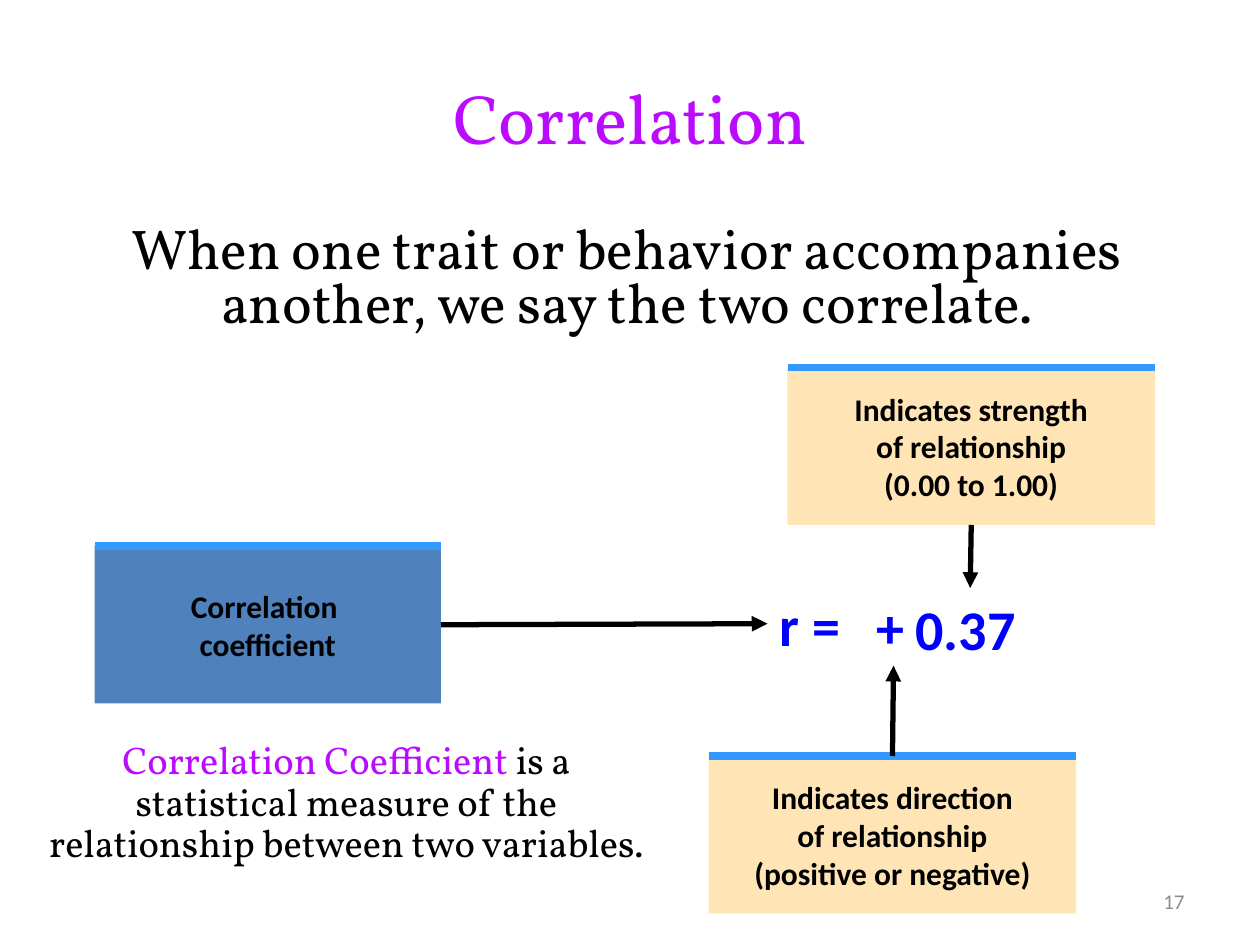
import pptx
import pptx.util
import pptx.dml.color
import pptx.enum.shapes
import pptx.enum.text
import pptx.oxml.ns
import lxml.etree

RGBColor = pptx.dml.color.RGBColor
PURPLE = RGBColor(0xBB, 0x0B, 0xFF)
BLACK = RGBColor(0, 0, 0)
GRAY = RGBColor(0x8C, 0x8C, 0x8C)
BLUE = RGBColor(0, 0, 0xFF)
STEEL = RGBColor(0x4F, 0x81, 0xBD)
SKY = RGBColor(0x33, 0x99, 0xFF)
CREAM = RGBColor(0xFF, 0xE5, 0xB5)

PP_ALIGN = pptx.enum.text.PP_ALIGN
TOP = pptx.enum.text.MSO_ANCHOR.TOP
MIDDLE = pptx.enum.text.MSO_ANCHOR.MIDDLE
qn = pptx.oxml.ns.qn

prs = pptx.Presentation()
prs.slide_width = pptx.util.Inches(10)
prs.slide_height = pptx.util.Inches(7.5)
COL = prs.slide_width / 120
ROW = prs.slide_height / 90
s = prs.slides.add_slide(prs.slide_layouts[6])


def put_text(sp, paragraphs, anchor, wrap, para, font):
    tf = sp.text_frame
    tf.word_wrap = wrap
    tf.vertical_anchor = anchor
    for i, runs in enumerate(paragraphs):
        p = tf.add_paragraph() if i else tf.paragraphs[0]
        for name, value in para.items():
            setattr(p, name, value)
        for text, color in runs:
            r = p.add_run()
            r.text = text
            for name, value in font.items():
                setattr(r.font, name, value)
            r.font.color.rgb = color


def add_line(shapes, x1, y1, x2, y2, color, width, arrow=False):
    ln = shapes.add_connector(
        pptx.enum.shapes.MSO_CONNECTOR.STRAIGHT,
        round(x1 * COL), round(y1 * ROW), round(x2 * COL), round(y2 * ROW))
    ln.line.color.rgb = color
    ln.line.width = pptx.util.Pt(width)
    if arrow:
        lxml.etree.SubElement(ln.line._get_or_add_ln(), qn("a:tailEnd"), type="triangle")
    lxml.etree.SubElement(ln._element.spPr, qn("a:effectLst"))


center = {"alignment": PP_ALIGN.CENTER}
calibri_bold = {"name": "Calibri", "bold": True}
pt = pptx.util.Pt

boxes = [
    (9, 52, 33, STEEL, ["Correlation ", "coefficient"]),
    (67.5, 72, 35, CREAM, ["Indicates direction", "of relationship", "(positive or negative)"]),
    (75, 35, 35, CREAM, ["Indicates strength", "of relationship", "(0.00 to 1.00)"]),
]
for x, y, w, fill, lines in boxes:
    group = s.shapes.add_group_shape()
    sp = group.shapes.add_shape(
        pptx.enum.shapes.MSO_SHAPE.RECTANGLE,
        round(x * COL), round(y * ROW), round(w * COL), round(15 * ROW))
    sp.shadow.inherit = False
    sp.fill.solid()
    sp.fill.fore_color.rgb = fill
    sp.line.fill.background()
    put_text(sp, [[(line, BLACK)] for line in lines], MIDDLE, False,
             center, {**calibri_bold, "size": pt(18)})
    add_line(group.shapes, x, y, x + w, y, SKY, 4.5)

formula = {**calibri_bold, "size": pt(32)}
left = {"alignment": PP_ALIGN.LEFT}
texts = [
    (86, 83.4, 28, 4.8, [("17", GRAY)], MIDDLE, True,
     {"alignment": PP_ALIGN.RIGHT}, {"name": "Calibri", "size": pt(12)}),
    (6, 3.6, 108, 15, [("Correlation", PURPLE)], MIDDLE, True,
     center, {"name": "Vollkorn", "size": pt(40)}),
    (5.75, 21, 108, 12,
     [("When one trait or behavior accompanies another, we say the two correlate.", BLACK)],
     TOP, True, {**center, "line_spacing": 0.8, "space_before": pt(6.4)},
     {"name": "Vollkorn", "size": pt(32)}),
    (73.1, 55.6, 9.1, 7.6, [("r =", BLUE)], TOP, False, left, formula),
    (86, 56, 12.7, 7.6, [("0.37", BLUE)], TOP, False, left, formula),
    (82.3, 55.8, 5.5, 7.6, [("+", BLUE)], TOP, False, left, formula),
    (3, 70, 60, 15,
     [("Correlation Coefficient ", PURPLE),
      ("is a statistical measure of the relationship between two variables.", BLACK)],
     TOP, True, {**center, "line_spacing": 0.9, "space_before": pt(4.4)},
     {"name": "Vollkorn", "size": pt(22)}),
]
for x, y, w, h, runs, anchor, wrap, para, font in texts:
    sp = s.shapes.add_textbox(round(x * COL), round(y * ROW), round(w * COL), round(h * ROW))
    put_text(sp, [runs], anchor, wrap, para, font)

arrows = [(85, 72, 85.1, 63.4), (42, 59.5, 73.1, 59.4), (92.5, 50, 92.4, 56)]
for ends in arrows:
    add_line(s.shapes, *ends, BLACK, 3, arrow=True)

prs.save("out.pptx")
